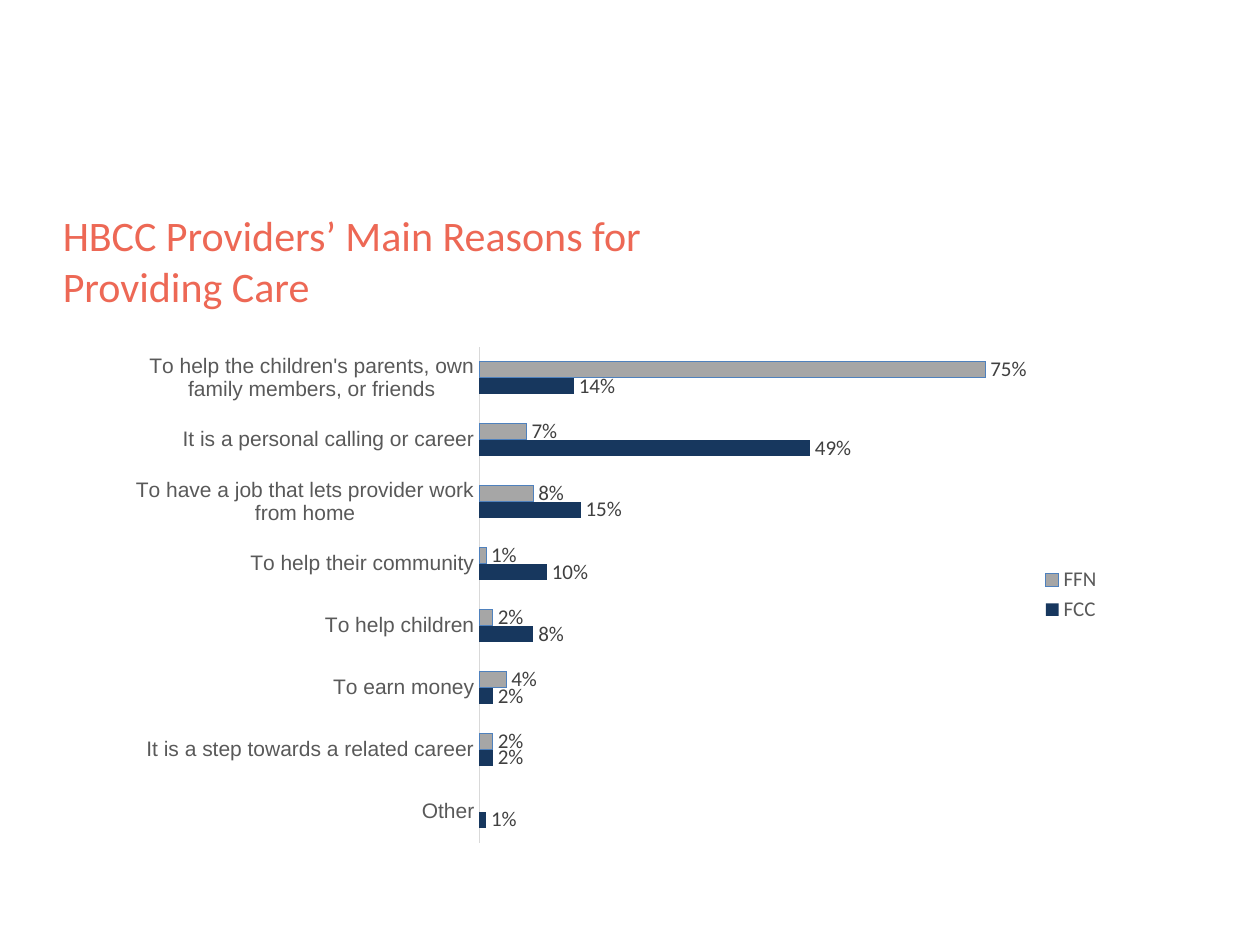
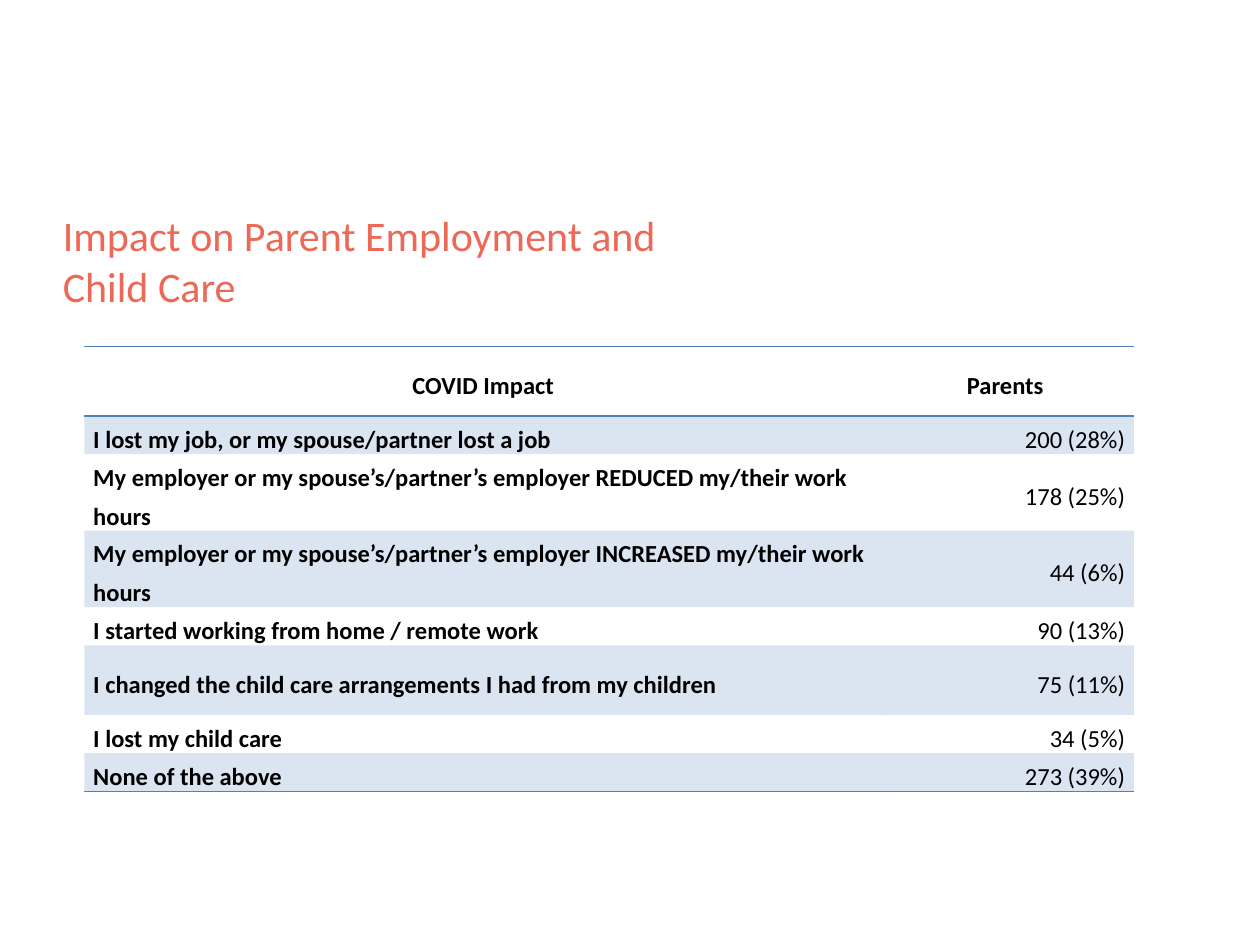
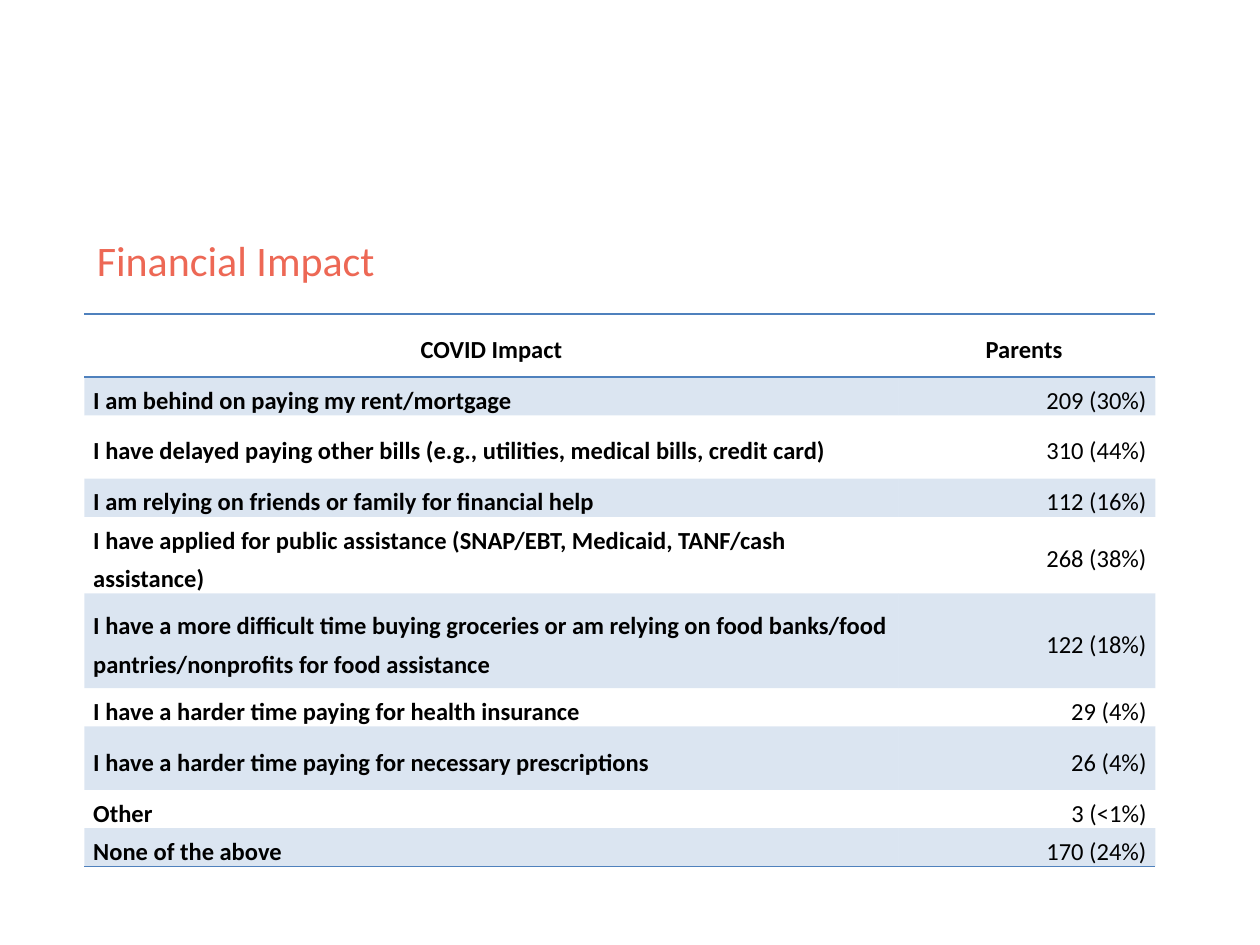
from lxml.etree import SubElement
from pptx import Presentation
from pptx.chart.data import CategoryChartData
from pptx.dml.color import RGBColor
from pptx.enum.chart import XL_CHART_TYPE as ChartType
from pptx.enum.chart import XL_LABEL_POSITION as LabelPosition
from pptx.enum.chart import XL_LEGEND_POSITION as LegendPosition
from pptx.enum.chart import XL_TICK_MARK as TickMark
from pptx.enum.text import MSO_ANCHOR as Anchor
from pptx.enum.text import PP_ALIGN as Align
from pptx.oxml import parse_xml
from pptx.oxml.ns import nsdecls, qn
from pptx.util import Inches, Pt

# Shared look
CORAL, BLUE, NAVY, GRAY = "ED6855", "4F81BD", "17375E", "A6A6A6"
BLACK, AXIS_TEXT, LABEL_TEXT, AXIS_LINE = "000000", "595959", "404040", "D9D9D9"
BODY_FONT, AXIS_FONT = "Calibri", "Arial"
NO_GRID_STYLE = "{2D5ABB26-0587-4C30-8999-92F81FD0307C}"
TITLE_TOP, TITLE_HEIGHT, TITLE_RIGHT = 1.65, 0.83, 5.33
TABLE_LEFT = 0.67
LABEL_SHARE = 0.76
BAND_ALPHA = 20

REASONS = [  # reason, FCC, FFN, from the bottom bar up
    ("Other", 0.01, None),
    ("It is a step towards a related career", 0.02, 0.02),
    ("To earn money", 0.02, 0.04),
    ("To help children", 0.08, 0.02),
    ("To help their community", 0.10, 0.01),
    ("To have a job that lets provider work from home", 0.15, 0.08),
    ("It is a personal calling or career", 0.49, 0.07),
    ("To help the children's parents, own family members, or friends", 0.14, 0.75),
]

HEADER = ("COVID Impact", "Parents ", 2)
EMPLOYMENT = [  # impact, parents, height in row units
    ("I lost my job, or my spouse/partner lost a job", "200 (28%)", 1),
    ("My employer or my spouse’s/partner’s employer REDUCED my/their work hours", "178 (25%)", 2),
    ("My employer or my spouse’s/partner’s employer INCREASED my/their work hours", "44 (6%)", 2),
    ("I started working from home / remote work", "90 (13%)", 1),
    ("I changed the child care arrangements I had from my children", "75 (11%)", 2),
    ("I lost my child care", "34 (5%)", 1),
    ("None of the above", "273 (39%)", 1),
]
FINANCES = [
    ("I am behind on paying my rent/mortgage", "209 (30%)", 1),
    ("I have delayed paying other bills (e.g., utilities, medical bills, credit card)",
     "310 (44%)", 2),
    ("I am relying on friends or family for financial help", "112 (16%)", 1),
    ("I have applied for public assistance (SNAP/EBT, Medicaid, TANF/cash assistance)",
     "268 (38%)", 2),
    ("I have a more difficult time buying groceries or am relying on food banks/food "
     "pantries/nonprofits for food assistance", "122 (18%)", 3),
    ("I have a harder time paying for health insurance", "29 (4%)", 1),
    ("I have a harder time paying for necessary prescriptions", "26 (4%)", 2),
    ("Other", "3 (<1%)", 1),
    ("None of the above", "170 (24%)", 1),
]


def color(value):
    return RGBColor.from_string(value)


def style_font(font, size, value, name=BODY_FONT, bold=False):
    font.size, font.name, font.bold = Pt(size), name, bold
    font.color.rgb = color(value)


def add_title(slide, text, left):
    box = slide.shapes.add_textbox(Inches(left), Inches(TITLE_TOP),
                                   Inches(TITLE_RIGHT - left), Inches(TITLE_HEIGHT))
    text_frame = box.text_frame
    text_frame.word_wrap = True
    text_frame.vertical_anchor = Anchor.MIDDLE
    text_frame.text = text
    style_font(text_frame.paragraphs[0].runs[0].font, 24, CORAL)


def add_reasons_chart(slide, box):
    names, fcc, ffn = zip(*REASONS)
    data = CategoryChartData(number_format="0%")
    data.categories = names
    data.add_series("FCC", fcc)
    data.add_series("FFN", ffn)
    chart = slide.shapes.add_chart(ChartType.BAR_CLUSTERED,
                                   *(Inches(length) for length in box), data).chart
    chart.has_title = False
    style_font(chart.font, 10, BLACK)

    # Axes
    category_axis, value_axis = chart.category_axis, chart.value_axis
    category_axis.major_tick_mark = category_axis.minor_tick_mark = TickMark.NONE
    style_font(category_axis.tick_labels.font, 12, AXIS_TEXT, AXIS_FONT)
    category_axis.format.line.color.rgb = color(AXIS_LINE)
    category_axis.format.line.width = Pt(0.75)
    value_axis.visible = value_axis.has_major_gridlines = False
    value_axis.minimum_scale, value_axis.maximum_scale = 0, 0.8

    # Legend
    chart.has_legend = True
    chart.legend.position = LegendPosition.RIGHT
    chart.legend.include_in_layout = False
    style_font(chart.legend.font, 12, AXIS_TEXT)

    # Bars and their values
    plot = chart.plots[0]
    plot.gap_width, plot.overlap, plot.vary_by_categories = 182, 0, False
    for series, fill in zip(plot.series, (NAVY, GRAY)):
        series.format.fill.solid()
        series.format.fill.fore_color.rgb = color(fill)
        labels = series.data_labels
        labels.show_value = True
        labels.number_format, labels.number_format_is_linked = "0%", False
        labels.position = LabelPosition.OUTSIDE_END
        style_font(labels.font, 12, LABEL_TEXT)
    ffn_line = plot.series[1].format.line
    ffn_line.color.rgb = color(BLUE)
    ffn_line.width = Pt(0)


def add_border(cell, side):
    """Rule one side of a cell: T for top, B for bottom."""
    cell._tc.get_or_add_tcPr().insert(0, parse_xml(
        f'<a:ln{side} {nsdecls("a")} w="{Pt(1)}"><a:solidFill>'
        f'<a:srgbClr val="{BLUE}"/></a:solidFill></a:ln{side}>'))


def fill_band(cell):
    cell.fill.solid()
    cell.fill.fore_color.rgb = color(BLUE)
    tint = cell._tc.tcPr.find(".//" + qn("a:srgbClr"))
    SubElement(tint, qn("a:alpha"), val=str(BAND_ALPHA * 1000))


def fill_cell(cell, text, align, bold):
    cell.margin_left = cell.margin_right = Inches(0.07)
    cell.margin_top = cell.margin_bottom = 0
    cell.vertical_anchor = Anchor.MIDDLE
    cell.text_frame.text = text
    paragraph = cell.text_frame.paragraphs[0]
    paragraph.alignment, paragraph.line_spacing = align, 1.3
    style_font(paragraph.runs[0].font, 14, BLACK, bold=bold)


def add_impact_table(slide, entries, box):
    rows = [HEADER, *entries]
    left, top, width, height = (Inches(length) for length in box)
    table = slide.shapes.add_table(len(rows), 2, left, top, width, height).table
    table.first_row = table.horz_banding = False
    table._tbl.tblPr.find(qn("a:tableStyleId")).text = NO_GRID_STYLE
    table.columns[0].width = round(width * LABEL_SHARE)
    table.columns[1].width = width - table.columns[0].width
    unit = height / sum(units for *_, units in rows)

    for index, (*texts, units) in enumerate(rows):
        is_header = index == 0
        table.rows[index].height = round(unit * units)
        for column, text in enumerate(texts):
            cell = table.cell(index, column)
            align = Align.CENTER if is_header else (Align.LEFT, Align.RIGHT)[column]
            fill_cell(cell, text, align, bold=is_header or column == 0)
            if index % 2:
                fill_band(cell)
            else:
                cell.fill.background()
            if is_header or index == len(rows) - 1:
                add_border(cell, "B")
            if is_header:
                add_border(cell, "T")


def main():
    presentation = Presentation()
    presentation.slide_width, presentation.slide_height = Inches(10), Inches(7.5)
    blank = presentation.slide_layouts[6]

    pages = [
        ("HBCC Providers’ Main Reasons for Providing Care", 0.4,
         lambda slide: add_reasons_chart(slide, (0.92, 2.67, 7.92, 4.1))),
        ("Impact on Parent Employment and Child Care", 0.4,
         lambda slide: add_impact_table(slide, EMPLOYMENT, (TABLE_LEFT, 2.75, 8.33, 3.31))),
        ("Financial Impact", TABLE_LEFT,
         lambda slide: add_impact_table(slide, FINANCES, (TABLE_LEFT, 2.49, 8.5, 4.02))),
    ]
    for title, title_left, add_body in pages:
        slide = presentation.slides.add_slide(blank)
        add_title(slide, title, title_left)
        add_body(slide)

    presentation.save("out.pptx")


if __name__ == "__main__":
    main()
